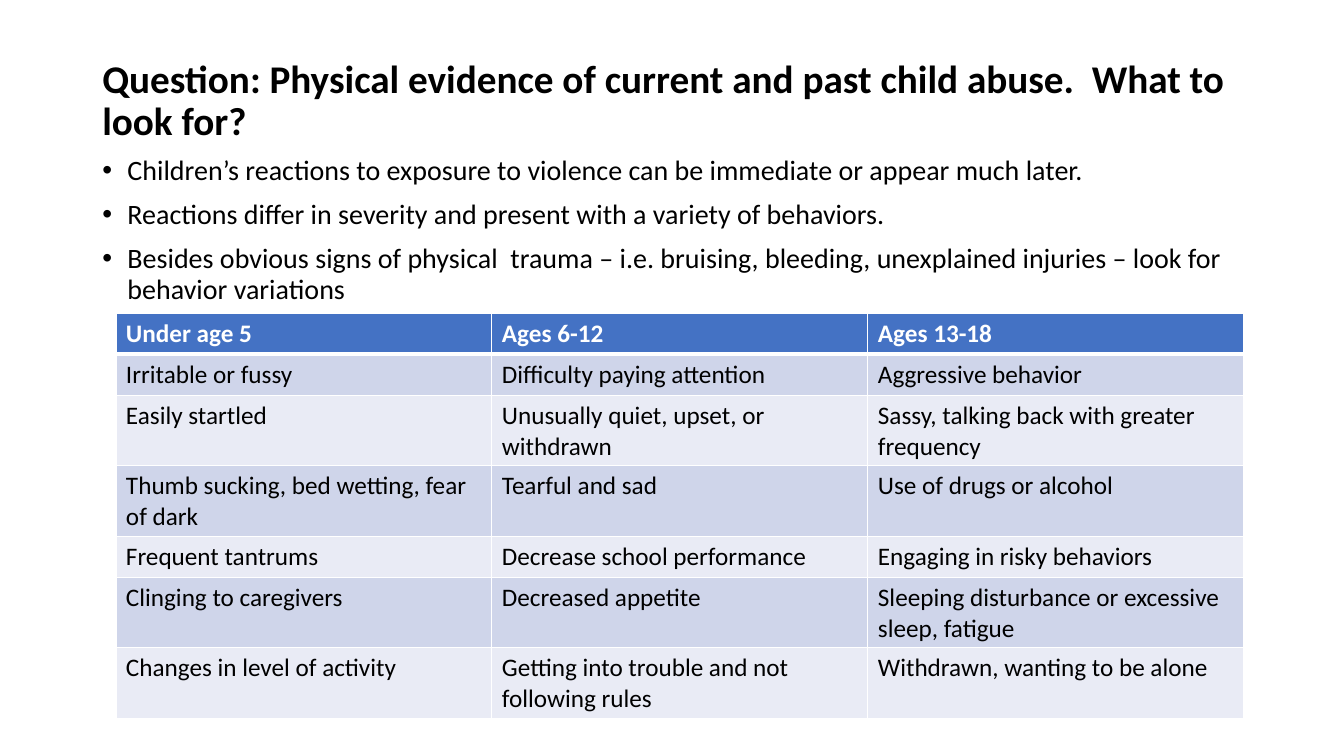
from pptx import Presentation
from pptx.dml.color import RGBColor
from pptx.enum.text import MSO_ANCHOR as Anchor
from pptx.oxml import parse_xml
from pptx.oxml.ns import nsdecls
from pptx.util import Pt

FONT = "Calibri"
COLOURS = {
    "text": "000000",
    "white": "FFFFFF",
    "header": "4472C4",
    "odd_row": "CFD5EA",
    "even_row": "E9EBF5",
}

TITLE = "Question: Physical evidence of current and past child abuse.  What to look for?"
REACTIONS = [
    "Children’s reactions to exposure to violence can be immediate or appear much later.",
    "Reactions differ in severity and present with a variety of behaviors.",
    "Besides obvious signs of physical  trauma – i.e. bruising, bleeding, "
    "unexplained injuries – look for behavior variations",
]
BEHAVIORS = [
    ("Under age 5", "Ages 6-12", "Ages 13-18"),
    ("Irritable or fussy", "Difficulty paying attention", "Aggressive behavior"),
    ("Easily startled", "Unusually quiet, upset, or withdrawn",
     "Sassy, talking back with greater frequency"),
    ("Thumb sucking, bed wetting, fear of dark", "Tearful and sad",
     "Use of drugs or alcohol"),
    ("Frequent tantrums", "Decrease school performance", "Engaging in risky behaviors"),
    ("Clinging to caregivers", "Decreased appetite",
     "Sleeping disturbance or excessive sleep, fatigue"),
    ("Changes in level of activity", "Getting into trouble and not following rules",
     "Withdrawn, wanting to be alone"),
]
ONE_LINE, TWO_LINES = 29.2, 50.4
ROW_HEIGHTS = [ONE_LINE, ONE_LINE, TWO_LINES, TWO_LINES, ONE_LINE, TWO_LINES, TWO_LINES]
COLUMN_WIDTH = 268.56


def style_spans(para, size, colour="text", bold=False):
    for span in para.runs:
        span.font.name = FONT
        span.font.size = Pt(size)
        span.font.bold = bold
        span.font.color.rgb = RGBColor.from_string(COLOURS[colour])


def add_text(page, top, height, lines, size, bold=False, anchor=Anchor.TOP):
    box = page.shapes.add_textbox(Pt(66), Pt(top), Pt(828), Pt(height))
    frame = box.text_frame
    frame.word_wrap = True
    frame.vertical_anchor = anchor
    frame.text = "\n".join(lines)
    for para in frame.paragraphs:
        para.line_spacing = 0.9
        style_spans(para, size, bold=bold)
    return frame


def add_bullets(frame):
    for para in frame.paragraphs:
        para.space_before = Pt(10)
        properties = para._p.get_or_add_pPr()
        properties.set("marL", str(Pt(18)))
        properties.set("indent", str(Pt(-18)))
        properties.append(parse_xml(f'<a:buFont {nsdecls("a")} typeface="Arial"/>'))
        properties.append(parse_xml(f'<a:buChar {nsdecls("a")} char="•"/>'))


def set_borders(cell, widths):
    properties = cell._tc.get_or_add_tcPr()
    for index, (side, width) in enumerate(widths.items()):
        properties.insert(index, parse_xml(
            f'<a:ln{side} {nsdecls("a")} w="{Pt(width)}"><a:solidFill>'
            f'<a:srgbClr val="{COLOURS["white"]}"/></a:solidFill></a:ln{side}>'))


def add_behavior_table(page):
    table = page.shapes.add_table(
        len(BEHAVIORS), len(BEHAVIORS[0]), Pt(82.8), Pt(223.9),
        Pt(COLUMN_WIDTH * len(BEHAVIORS[0])), Pt(sum(ROW_HEIGHTS))).table
    for column in table.columns:
        column.width = Pt(COLUMN_WIDTH)
    for index, (row, texts) in enumerate(zip(table.rows, BEHAVIORS)):
        row.height = Pt(ROW_HEIGHTS[index])
        header = index == 0
        fill = "header" if header else "odd_row" if index % 2 else "even_row"
        widths = {"L": 1, "R": 1, "T": 3 if index == 1 else 1, "B": 3 if header else 1}
        for cell, text in zip(row.cells, texts):
            cell.text = text
            cell.fill.solid()
            cell.fill.fore_color.rgb = RGBColor.from_string(COLOURS[fill])
            set_borders(cell, widths)
            style_spans(cell.text_frame.paragraphs[0], 18,
                        "white" if header else "text", header)


def main():
    deck = Presentation()
    deck.slide_width, deck.slide_height = Pt(960), Pt(540)
    page = deck.slides.add_slide(deck.slide_layouts[6])

    # Question and general reactions
    add_text(page, 28.8, 87.8, [TITLE], 28, bold=True, anchor=Anchor.MIDDLE)
    add_bullets(add_text(page, 108, 342.7, REACTIONS, 20))

    # Behaviors by age group
    add_behavior_table(page)
    deck.save("out.pptx")


if __name__ == "__main__":
    main()
